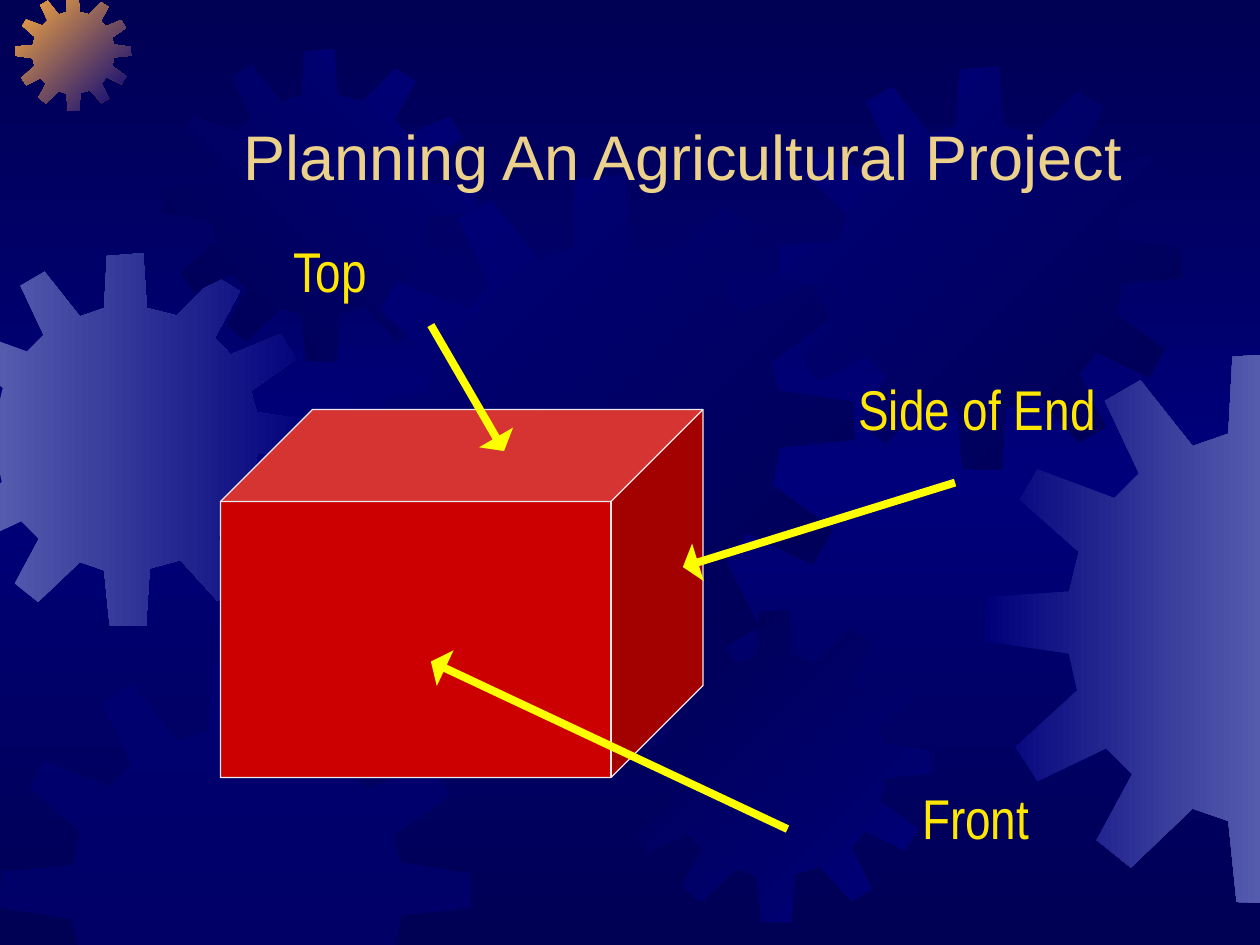
import copy
from dataclasses import dataclass
from typing import NamedTuple

import pptx
import pptx.dml.color
import pptx.enum.shapes
import pptx.enum.text
import pptx.oxml
import pptx.oxml.ns
import pptx.util
from pptx.util import Inches

Point = tuple[float, float]


@dataclass(frozen=True)
class Theme:
    night: str = "000054"
    navy: str = "00007A"
    steel: str = "555BAD"
    amber: str = "FCAB40"
    sand: str = "EBD189"
    red: str = "CC0000"
    edge: str = "EAEAEA"
    arrow: str = "FFFF00"
    label: tuple[str, str] = ("FFE701", "FE3E02")
    head: float = 36
    note: float = 32
    head_font: str = "Arial"
    note_font: str = "Arial Narrow"


class Gear(NamedTuple):
    left: float
    top: float
    size: float
    colors: tuple[str, ...]
    angle: int = 0
    alpha: int = 100


class Box(NamedTuple):
    left: float
    top: float
    width: float
    height: float


class Label(NamedTuple):
    text: str
    box: Box
    start: Point
    end: Point


THEME = Theme()
WIDE, HIGH = 10, 7.5

# One gear outline on a 401-unit square; every gear scales it.
UNIT = 401
OUTLINE = [
    (255, 67), (223, 59), (219, 0), (180, 3), (177, 59), (151, 68),
    (113, 20), (87, 35), (112, 88), (94, 106), (38, 85), (25, 107),
    (68, 145), (61, 174), (1, 178), (0, 210), (61, 219), (67, 246),
    (22, 287), (38, 312), (88, 288), (107, 307), (81, 355), (106, 375),
    (151, 332), (177, 341), (183, 400), (222, 401), (226, 339), (259, 330),
    (299, 374), (325, 358), (299, 306), (316, 284), (368, 309), (384, 281),
    (336, 246), (342, 216), (401, 210), (400, 180), (341, 171), (335, 148),
    (383, 114), (367, 87), (313, 109), (296, 91), (323, 41), (297, 25),
]

GEARS = [
    Gear(-0.48, 2.01, 2.96, (THEME.steel, THEME.navy)),
    Gear(0.12, -0.04, 0.92, (THEME.amber, THEME.navy), 45),
    Gear(1.3, 0.39, 2.48, (THEME.night, THEME.navy), 315),
    Gear(2.77, 1.39, 4.01, (THEME.navy, THEME.night), 45),
    Gear(0, 5.25, 3.74, (THEME.navy,), alpha=50),
    Gear(4.91, 4.84, 2.48, (THEME.night, THEME.navy), 45),
    Gear(6.18, 0.53, 3.2, (THEME.navy, THEME.night), 45),
    Gear(7.82, 2.8, 4.37, (THEME.navy, THEME.steel)),
]

LABELS = [
    Label("Top", Box(1.83, 1.83, 1.58, 0.67), (3.42, 2.58), (4, 3.58)),
    Label("Front", Box(6.33, 6.17, 2.83, 0.67), (6.25, 6.58), (3.42, 5.25)),
    Label("Side of End", Box(5.92, 2.92, 3.67, 0.67), (7.58, 3.83), (5.42, 4.5)),
]


def rgb(code: str) -> pptx.dml.color.RGBColor:
    return pptx.dml.color.RGBColor.from_string(code)


def paint(fill, colors: tuple[str, ...], angle: int = 0) -> None:
    """Fill with one colour, or with a gradient turned clockwise by angle."""
    if len(colors) == 1:
        fill.solid()
        fill.fore_color.rgb = rgb(colors[0])
        return
    fill.gradient()
    fill.gradient_angle = -angle % 360
    for stop, color, place in zip(fill.gradient_stops, colors, (0, 1)):
        stop.color.rgb = rgb(color)
        stop.position = place


def back(slide) -> None:
    """Paint the backdrop dark at top and bottom, lighter midway."""
    paint(slide.background.fill, (THEME.night, THEME.navy), 90)
    first, mid = slide._element.xpath(".//p:bg//a:gs")
    mid.set("pos", "50000")
    last = copy.deepcopy(first)
    last.set("pos", "100000")
    mid.addnext(last)


def clip(points: list[Point], axis: int, bound: float, sign: int) -> list[Point]:
    """Keep the part of a polygon on one side of an axis-parallel line."""
    kept = []
    for a, b in zip(points[-1:] + points[:-1], points):
        da, db = sign * (a[axis] - bound), sign * (b[axis] - bound)
        if (da < 0) != (db < 0):
            t = da / (da - db)
            kept.append((a[0] + t * (b[0] - a[0]), a[1] + t * (b[1] - a[1])))
        if db >= 0:
            kept.append(b)
    return kept


def draw_gear(slide, gear: Gear) -> None:
    ratio = gear.size / UNIT
    points = [(gear.left + x * ratio, gear.top + y * ratio) for x, y in OUTLINE]
    for axis, bound, sign in ((0, 0, 1), (1, 0, 1), (0, WIDE, -1), (1, HIGH, -1)):
        points = clip(points, axis, bound, sign)
    spots = [(Inches(x), Inches(y)) for x, y in points]
    pen = slide.shapes.build_freeform(*spots[0])
    pen.add_line_segments(spots[1:], close=True)
    shape = pen.convert_to_shape()
    shape.shadow.inherit = False
    shape.line.fill.background()
    paint(shape.fill, gear.colors, gear.angle)
    if gear.alpha < 100:
        tint = shape._element.xpath("./p:spPr/a:solidFill/a:srgbClr")[0]
        alpha = pptx.oxml.parse_xml(
            f'<a:alpha {pptx.oxml.ns.nsdecls("a")} val="{gear.alpha * 1000}"/>')
        tint.append(alpha)


def write(shapes, text: str, box: Box, size: float, font: str,
          colors: tuple[str, ...], wrap: bool = False):
    """Add a centred line of text and return its frame."""
    frame = shapes.add_textbox(*map(Inches, box)).text_frame
    frame.text = text
    frame.word_wrap = wrap
    line = frame.paragraphs[0]
    line.alignment = pptx.enum.text.PP_ALIGN.CENTER
    face = line.runs[0].font
    face.size = pptx.util.Pt(size)
    face.name = font
    paint(face.fill, colors, 90)
    return frame


def draw_arrow(shapes, start: Point, end: Point) -> None:
    line = shapes.add_connector(
        pptx.enum.shapes.MSO_CONNECTOR.STRAIGHT, *map(Inches, start + end))
    line.line.color.rgb = rgb(THEME.arrow)
    line.line.width = pptx.util.Pt(4.5)
    names = pptx.oxml.ns.nsdecls("a")
    line.line._get_or_add_ln().append(pptx.oxml.parse_xml(
        f'<a:tailEnd {names} type="triangle" w="lg" len="sm"/>'))
    line._element.spPr.append(pptx.oxml.parse_xml(f"<a:effectLst {names}/>"))


def draw_label(slide, label: Label) -> None:
    group = slide.shapes.add_group_shape()
    write(group.shapes, label.text, label.box, THEME.note, THEME.note_font, THEME.label)
    draw_arrow(group.shapes, label.start, label.end)


def draw_cube(slide, box: Box) -> None:
    cube = slide.shapes.add_shape(
        pptx.enum.shapes.MSO_SHAPE.CUBE, *map(Inches, box))
    cube.adjustments[0] = 0.25
    cube.shadow.inherit = False
    paint(cube.fill, (THEME.red,))
    cube.line.color.rgb = rgb(THEME.edge)
    cube.line.width = pptx.util.Pt(0.75)


def main() -> None:
    deck = pptx.Presentation()
    deck.slide_width, deck.slide_height = Inches(WIDE), Inches(HIGH)
    slide = deck.slides.add_slide(deck.slide_layouts[6])
    back(slide)
    for gear in GEARS:
        draw_gear(slide, gear)
    title = write(slide.shapes, "Planning An Agricultural Project",
                  Box(1.17, 0.33, 8.5, 1.25), THEME.head, THEME.head_font,
                  (THEME.sand,), wrap=True)
    title.vertical_anchor = pptx.enum.text.MSO_ANCHOR.BOTTOM
    draw_cube(slide, Box(1.75, 3.25, 3.83, 2.92))
    for label in LABELS:
        draw_label(slide, label)
    deck.save("out.pptx")


if __name__ == "__main__":
    main()
